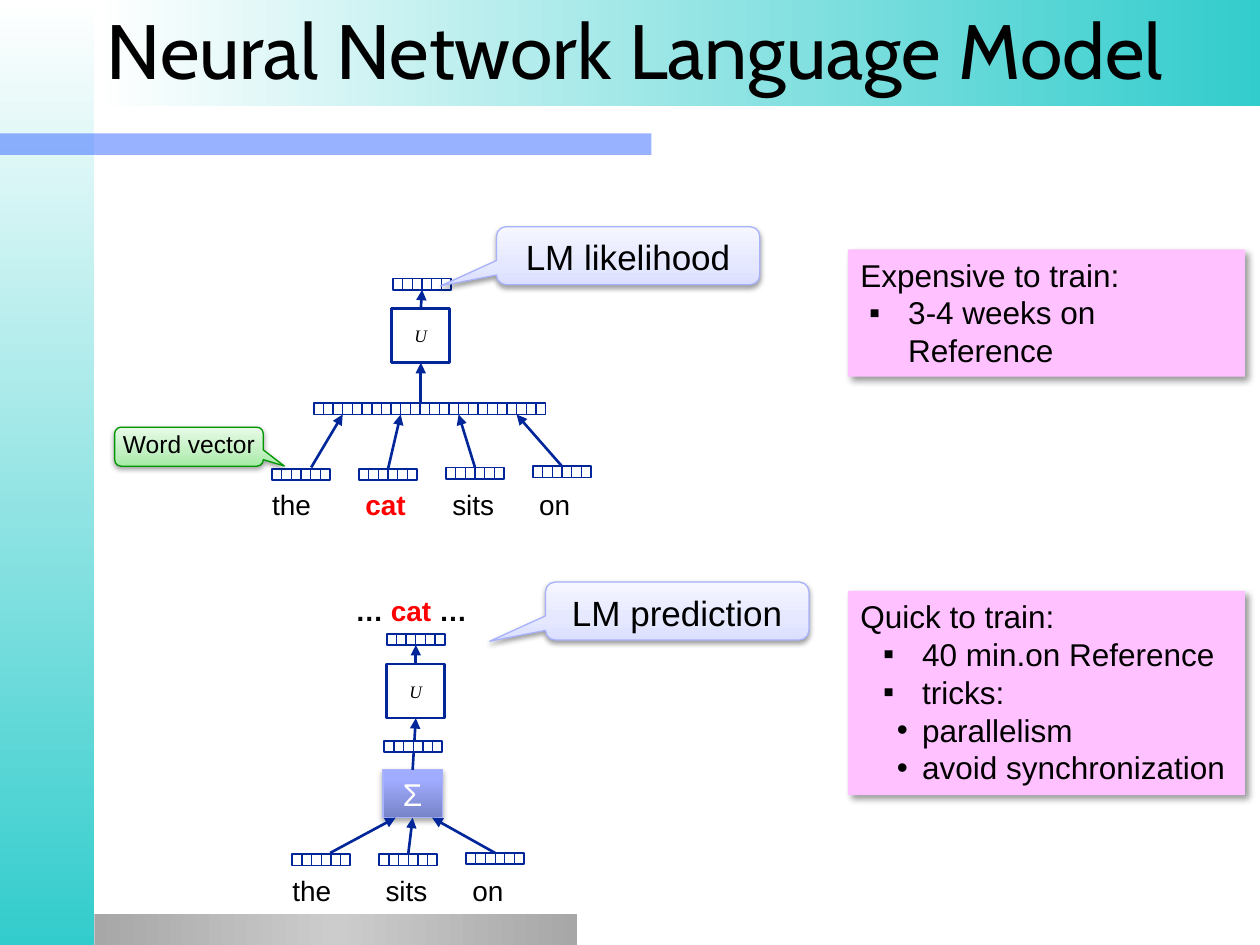
"""Build the slide comparing two neural network language models."""
import lxml.etree
import pptx
import pptx.dml.color
import pptx.enum.shapes
import pptx.enum.text
import pptx.oxml.ns
import pptx.util

Inches, Pt = pptx.util.Inches, pptx.util.Pt
SHAPE = pptx.enum.shapes.MSO_SHAPE
ANCHOR, ALIGN = pptx.enum.text.MSO_ANCHOR, pptx.enum.text.PP_ALIGN
qn = pptx.oxml.ns.qn

THEME = {
    "sans": "Arial", "title_font": "Cabin", "math_font": "Times New Roman",
    "title": 44, "callout": 20, "note": 18, "word": 16, "label": 14, "weight": 10,
    "black": "000000", "white": "FFFFFF", "red": "FF0000", "navy": "002699",
    "pink": "FFC1FF", "stripe": "3366FF", "lilac": "A7B2FB", "green": "009600",
    "teal_fade": [(0, "FFFFFF"), (100, "33CCCC")],
    "grey_fade": [(0, "A7A7A7"), (50, "CCCCCC"), (100, "A7A7A7")],
    "lilac_fade": [(0, "DBDFFF"), (35, "E5E8FF"), (100, "F5F6FF")],
    "green_fade": [(0, "A5EBA5"), (35, "C1F0C1"), (100, "E7FAE7")],
    "sum_fade": [(0, "7883C7"), (80, "A0ACFF"), (100, "A2AEFF")],
    "soft_shadow": (38, 3.1, 1.6, 90), "sum_shadow": (35, 3.1, 1.8, 90),
    "note_shadow": (40, 4, 3, 45),
}
TITLE = "Neural Network Language Model"
BANDS = [
    ((0, 0, 0.75, 7.5), "teal_fade", 90),
    ((0, 1.06, 5.17, 0.17), "stripe", None),
    ((0.75, 7.25, 3.83, 0.25), "grey_fade", 0),
    ((0.75, 0, 9.26, 0.84), "teal_fade", 0),
]
VECTOR_W, VECTOR_H, VECTOR_CELLS, WORD_PITCH = 0.46, 0.09, 6, 0.69
FIRST_TAB = 0.74
SENTENCES = [
    ("full", 2.16, 3.87, [("the", 3.72), ("cat", 3.72), ("sits", 3.71), ("on", 3.7)]),
    ("context", 2.32, 6.93, [("the", 6.78), ("sits", 6.78), ("on", 6.77)]),
]
JOINED_LEFT, JOINED_TOP, JOINED_COUNT = 2.49, 3.2, 4
OUTPUTS = [("likelihood", 3.12, 2.21), ("prediction", 3.07, 5.03)]
WEIGHTS = [("full U", 3.11, 2.45), ("context U", 3.07, 5.27)]
SUM_BOX = (3.04, 6.11, 0.47, 0.38)
SUM_VECTOR = (3.05, 5.88)
LINKS = [
    ((2.47, 3.71), ("joined 0", 2)),
    (("full cat", 0), ("joined 1", 2)),
    (("full sits", 0), ("joined 2", 2)),
    (("full on", 0), ("joined 3", 2)),
    ((3.34, 3.2), ("full U", 2)),
    (("full U", 0), ("likelihood", 2)),
    ((2.62, 6.77), (3.14, 6.49)),
    (("context sits", 0), ("sum", 2)),
    (("context on", 0), (3.43, 6.49)),
    (("sum", 0), ("context U", 2)),
    (("context U", 0), ("prediction", 2)),
]
PREDICTED = [("…", "black"), (" cat", "red"), (" …", "black")]
CALLOUTS = [
    ("LM likelihood", (3.94, 1.8, 2.09, 0.46), (-0.712, 0.521), "lilac", "callout", None),
    ("LM prediction", (4.33, 4.62, 2.09, 0.46), (-0.712, 0.521), "lilac", "callout", None),
    ("Word vector", (0.91, 3.39, 1.18, 0.31), (0.641, 0.495), "green", "label", 0),
]
NOTES = [
    ((6.73, 1.98, 3.15, 1.01), 0.38,
     [("Expensive to train:", 0), ("3-4 weeks on Reference", 1)]),
    ((6.73, 4.69, 3.15, 1.62), 0.49,
     [("Quick to train:", 0), ("40 min.on Reference", 1), ("tricks:", 1),
      ("parallelism", 2), ("avoid synchronization", 2)]),
]
BULLETS = {1: ("▪", -0.31), 2: ("•", -0.2)}


def rgb(name):
    return pptx.dml.color.RGBColor.from_string(THEME[name])


def add_xml(parent, tag, **attributes):
    values = {key: str(value) for key, value in attributes.items()}
    return lxml.etree.SubElement(parent, qn(tag), values)


def add_box(shapes, place, fill=None, angle=None, line=None, width=1.0,
            shadow=None, preset=SHAPE.RECTANGLE):
    box = shapes.add_shape(preset, *map(Inches, place))
    if fill is None:
        box.fill.background()
    elif angle is None:
        box.fill.solid()
        box.fill.fore_color.rgb = rgb(fill)
    else:
        box.fill.gradient()
        fade = box.element.spPr.find(qn("a:gradFill"))
        fade.clear()
        stops = add_xml(fade, "a:gsLst")
        for position, color in THEME[fill]:
            add_xml(add_xml(stops, "a:gs", pos=position * 1000), "a:srgbClr", val=color)
        add_xml(fade, "a:lin", ang=angle * 60000, scaled=0)
    if line:
        box.line.color.rgb = rgb(line)
        box.line.width = Pt(width)
    else:
        box.line.fill.background()
    box.shadow.inherit = False
    if shadow:
        alpha, blur, distance, direction = THEME[shadow]
        outer = add_xml(box.element.spPr.find(qn("a:effectLst")), "a:outerShdw",
                        blurRad=Pt(blur), dist=Pt(distance), dir=direction * 60000,
                        algn="ctr", rotWithShape=0)
        color = add_xml(outer, "a:srgbClr", val=THEME["black"])
        add_xml(color, "a:alpha", val=alpha * 1000)
    return box


def set_frame(frame, anchor=ANCHOR.TOP, inset=None, wrap=True):
    frame.word_wrap, frame.vertical_anchor = wrap, anchor
    if inset is not None:
        frame.margin_left = frame.margin_right = Inches(inset)
        frame.margin_top = frame.margin_bottom = Inches(inset)


def style(item, size, color="black", font="sans", bold=False, italic=False):
    item.font.name, item.font.size = THEME[font], Pt(THEME[size])
    item.font.color.rgb = rgb(color)
    item.font.bold, item.font.italic = bold, italic


def write(box, text, size, align=ALIGN.CENTER, **look):
    box.text_frame.text = text
    paragraph = box.text_frame.paragraphs[0]
    paragraph.alignment = align
    style(paragraph.runs[0], size, **look)


def add_line(shapes, start, end, width):
    line = shapes.add_connector(pptx.enum.shapes.MSO_CONNECTOR.STRAIGHT,
                                *map(Inches, (*start, *end)))
    line.line.color.rgb = rgb("navy")
    line.line.width = Pt(width)
    add_xml(line.element.spPr, "a:effectLst")
    return line


def add_vector(slide, left, top, fill="white"):
    cells = slide.shapes.add_group_shape().shapes
    outline = add_box(cells, (left, top, VECTOR_W, VECTOR_H), fill, line="navy")
    for cell in range(1, VECTOR_CELLS):
        x = left + cell * VECTOR_W / VECTOR_CELLS
        add_line(cells, (x, top), (x, top + VECTOR_H), 0.75)
    return outline


def add_link(slide, parts, start, end):
    points = [(0, 0) if isinstance(spot[0], str) else spot for spot in (start, end)]
    link = add_line(slide.shapes, *points, 1.5)
    for spot, connect in ((start, link.begin_connect), (end, link.end_connect)):
        if isinstance(spot[0], str):
            connect(parts[spot[0]], spot[1])
    add_xml(link.line._get_or_add_ln(), "a:tailEnd", type="triangle")


def add_words(slide, place, pieces, bold=False):
    box = slide.shapes.add_textbox(*map(Inches, place))
    set_frame(box.text_frame, inset=0, wrap=True)
    paragraph = box.text_frame.paragraphs[0]
    for text, color in pieces:
        run = paragraph.add_run()
        run.text = text
        style(run, "word", color, bold=bold or color == "red")
    return paragraph


def add_networks(slide):
    parts = {}
    for model, left, text_top, words in SENTENCES:
        for index, (word, top) in enumerate(words):
            parts[f"{model} {word}"] = add_vector(slide, left + index * WORD_PITCH, top)
        pieces = [("\t" * (index > 0) + word, "red" if word == "cat" else "black")
                  for index, (word, _) in enumerate(words)]
        place = (left, text_top, len(words) * WORD_PITCH, 0.27)
        tabs = add_xml(add_words(slide, place, pieces)._p.get_or_add_pPr(), "a:tabLst")
        for index in range(len(words) - 1):
            add_xml(tabs, "a:tab", pos=Inches(FIRST_TAB + index * WORD_PITCH), algn="l")
    for index in range(JOINED_COUNT):
        parts[f"joined {index}"] = add_vector(
            slide, JOINED_LEFT + index * VECTOR_W, JOINED_TOP)
    for name, left, top in OUTPUTS:
        parts[name] = add_vector(slide, left, top, fill=None)
    for name, left, top in WEIGHTS:
        parts[name] = add_box(slide.shapes, (left, top, 0.46, 0.43), "white",
                              line="navy", width=1.5)
        set_frame(parts[name].text_frame, ANCHOR.MIDDLE)
        write(parts[name], "U", "weight", font="math_font", italic=True)
    parts["sum"] = add_box(slide.shapes, SUM_BOX, "sum_fade", 270, "lilac", 0.75, "sum_shadow")
    set_frame(parts["sum"].text_frame, ANCHOR.MIDDLE, 0.04)
    write(parts["sum"], "Σ", "note", color="white")
    for start, end in LINKS:
        add_link(slide, parts, start, end)
    add_vector(slide, *SUM_VECTOR)
    add_words(slide, (2.82, 4.71, 0.96, 0.27), PREDICTED, bold=True)


def add_note(slide, place, indent, lines):
    note = add_box(slide.shapes, place, "pink", shadow="note_shadow")
    set_frame(note.text_frame)
    note.text_frame.text = "\n".join(text for text, _ in lines)
    for paragraph, (_, level) in zip(note.text_frame.paragraphs, lines):
        paragraph.alignment, paragraph.level = ALIGN.LEFT, level
        style(paragraph.runs[0], "note")
        if level:
            symbol, hanging = BULLETS[level]
            properties = paragraph._p.get_or_add_pPr()
            properties.set("marL", str(Inches(indent)))
            properties.set("indent", str(Inches(hanging)))
            add_xml(properties, "a:buFont", typeface=THEME["sans"])
            add_xml(properties, "a:buChar", char=symbol)


def main():
    deck = pptx.Presentation()
    deck.slide_width, deck.slide_height = Inches(10), Inches(7.5)
    slide = deck.slides.add_slide(deck.slide_layouts[6])
    for place, fill, angle in BANDS:
        band = add_box(slide.shapes, place, fill, angle)
        if fill == "stripe":
            add_xml(band.element.spPr.find(".//" + qn("a:srgbClr")), "a:alpha", val=50000)
    title = slide.shapes.add_textbox(*map(Inches, (0.75, -0.03, 9.26, 0.83)))
    set_frame(title.text_frame, ANCHOR.MIDDLE)
    write(title, TITLE, "title", ALIGN.LEFT, font="title_font")
    add_networks(slide)
    for text, place, tip, color, size, inset in CALLOUTS:
        callout = add_box(slide.shapes, place, color + "_fade", 270, color, 0.75,
                          "soft_shadow", SHAPE.ROUNDED_RECTANGULAR_CALLOUT)
        callout.adjustments[0], callout.adjustments[1] = tip
        set_frame(callout.text_frame, inset=inset)
        write(callout, text, size)
    for place, indent, lines in NOTES:
        add_note(slide, place, indent, lines)
    deck.save("out.pptx")


if __name__ == "__main__":
    main()
